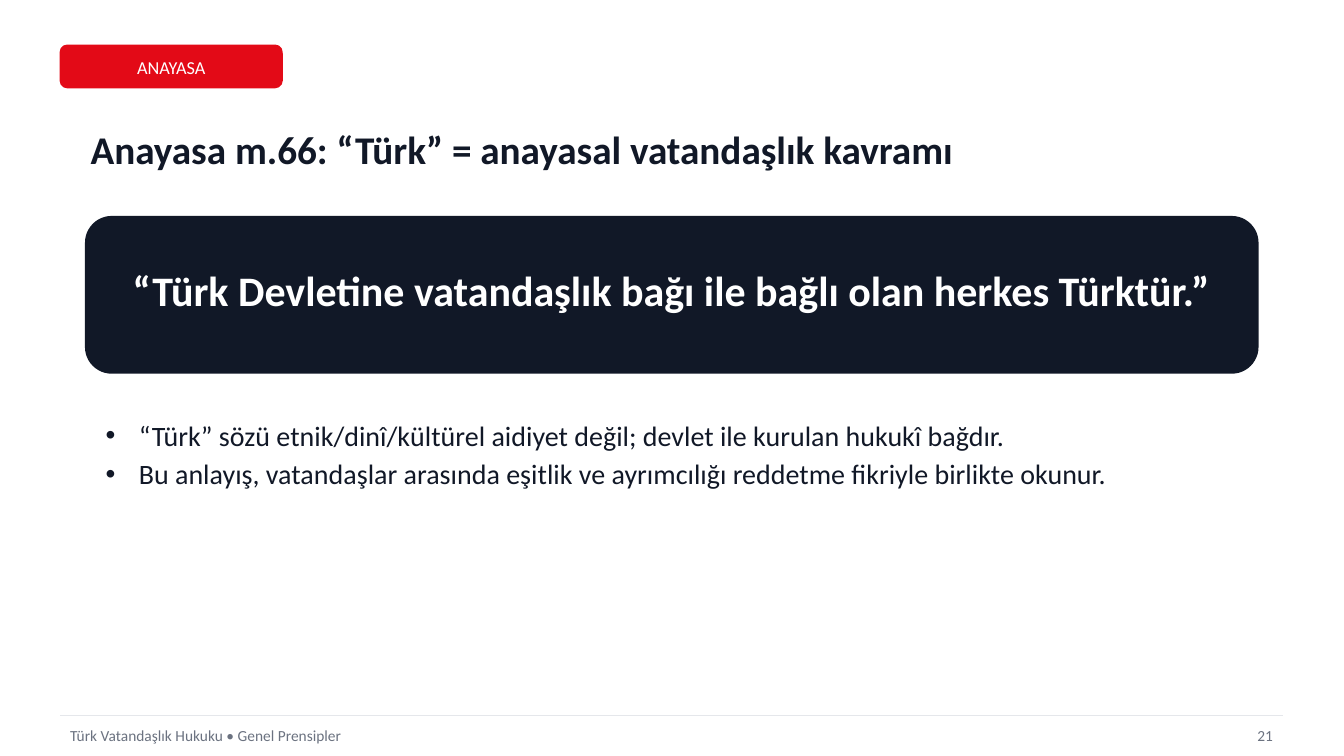
from dataclasses import dataclass

from lxml.etree import SubElement
from pptx import Presentation
from pptx.dml.color import RGBColor
from pptx.enum.shapes import MSO_CONNECTOR, MSO_SHAPE
from pptx.enum.text import MSO_ANCHOR, PP_ALIGN
from pptx.oxml.ns import qn
from pptx.util import Cm, Pt


@dataclass(frozen=True)
class Theme:
    font: str = "Calibri"
    red: str = "E30A17"
    ink: str = "111827"
    white: str = "FFFFFF"
    rule: str = "E5E7EB"
    grey: str = "6B7280"
    tag: int = 13
    title: int = 28
    quote: int = 30
    body: int = 20
    foot: int = 11


class Deck:
    def __init__(self, theme):
        self.theme = theme
        self.file = Presentation()
        self.file.slide_width = Cm(33.87)
        self.file.slide_height = Cm(19.05)
        self.slide = None

    def add(self):
        self.slide = self.file.slides.add_slide(self.file.slide_layouts[5])

    def run(self, para, text, size, color, bold=False):
        run = para.add_run()
        run.text = text
        font = run.font
        font.name, font.size, font.bold = self.theme.font, Pt(size), bold
        font.color.rgb = RGBColor.from_string(color)

    def title(self, text, *box):
        shape = self.slide.shapes.title
        shape.left, shape.top, shape.width, shape.height = map(Cm, box)
        frame = shape.text_frame
        frame.word_wrap = True
        frame.vertical_anchor = MSO_ANCHOR.MIDDLE
        para = frame.paragraphs[0]
        para.alignment = PP_ALIGN.LEFT
        self.run(para, text, self.theme.title, self.theme.ink, True)

    def card(self, color, *box):
        shape = self.slide.shapes.add_shape(
            MSO_SHAPE.ROUNDED_RECTANGLE, *map(Cm, box))
        shape.shadow.inherit = False
        rgb = RGBColor.from_string(color)
        shape.fill.solid()
        shape.fill.fore_color.rgb = rgb
        shape.line.color.rgb = rgb
        shape.line.width = Pt(1)

    def frame(self, box, anchor):
        frame = self.slide.shapes.add_textbox(*map(Cm, box)).text_frame
        frame.word_wrap = True
        frame.vertical_anchor = anchor
        return frame

    def label(self, text, size, color, align, *box, bold=False):
        para = self.frame(box, MSO_ANCHOR.MIDDLE).paragraphs[0]
        para.alignment = align
        self.run(para, text, size, color, bold)

    def list(self, items, *box):
        frame = self.frame(box, MSO_ANCHOR.TOP)
        for i, text in enumerate(items):
            para = frame.add_paragraph() if i else frame.paragraphs[0]
            props = para._p.get_or_add_pPr()
            props.set("marL", str(Cm(0.84)))
            props.set("indent", str(-Cm(0.84)))
            SubElement(props, qn("a:buFont"), typeface="Arial")
            SubElement(props, qn("a:buChar"), char="•")
            para.line_spacing = 1.15
            self.run(para, text, self.theme.body, self.theme.ink)

    def rule(self, left, right, top):
        line = self.slide.shapes.add_connector(
            MSO_CONNECTOR.STRAIGHT, Cm(left), Cm(top), Cm(right), Cm(top))
        line.line.color.rgb = RGBColor.from_string(self.theme.rule)
        line.line.width = Pt(1)
        SubElement(line._element.spPr, qn("a:effectLst"))


def main():
    look = Theme()
    deck = Deck(look)
    deck.add()
    left, right = 1.52, 32.33

    # Section tag
    deck.card(look.red, left, 1.14, 5.59, 1.07)
    deck.label("ANAYASA", look.tag, look.white, PP_ALIGN.CENTER,
               left, 1.32, 5.59, 0.76)

    # Title
    deck.title("Anayasa m.66: “Türk” = anayasal vatandaşlık kavramı",
               2.03, 2.79, 29.79, 1.9)

    # Quote
    deck.card(look.ink, 2.16, 5.46, 29.54, 3.94)
    deck.label(
        "“Türk Devletine vatandaşlık bağı ile bağlı olan herkes Türktür.”",
        look.quote, look.white, PP_ALIGN.CENTER,
        3.05, 6.22, 27.76, 2.16, bold=True)

    # Points
    deck.list([
        "“Türk” sözü etnik/dinî/kültürel aidiyet değil; "
        "devlet ile kurulan hukukî bağdır.",
        "Bu anlayış, vatandaşlar arasında eşitlik ve ayrımcılığı "
        "reddetme fikriyle birlikte okunur.",
    ], 2.41, 10.29, 30.48, 3.66)

    # Footer
    deck.rule(left, right, 18.03)
    deck.label("Türk Vatandaşlık Hukuku • Genel Prensipler", look.foot,
               look.grey, PP_ALIGN.LEFT, left, 18.16, 29.29, 0.76)
    deck.label("21", look.foot, look.grey, PP_ALIGN.RIGHT,
               right - 1.27, 18.16, 1.27, 0.76)

    deck.file.save("out.pptx")


if __name__ == "__main__":
    main()
